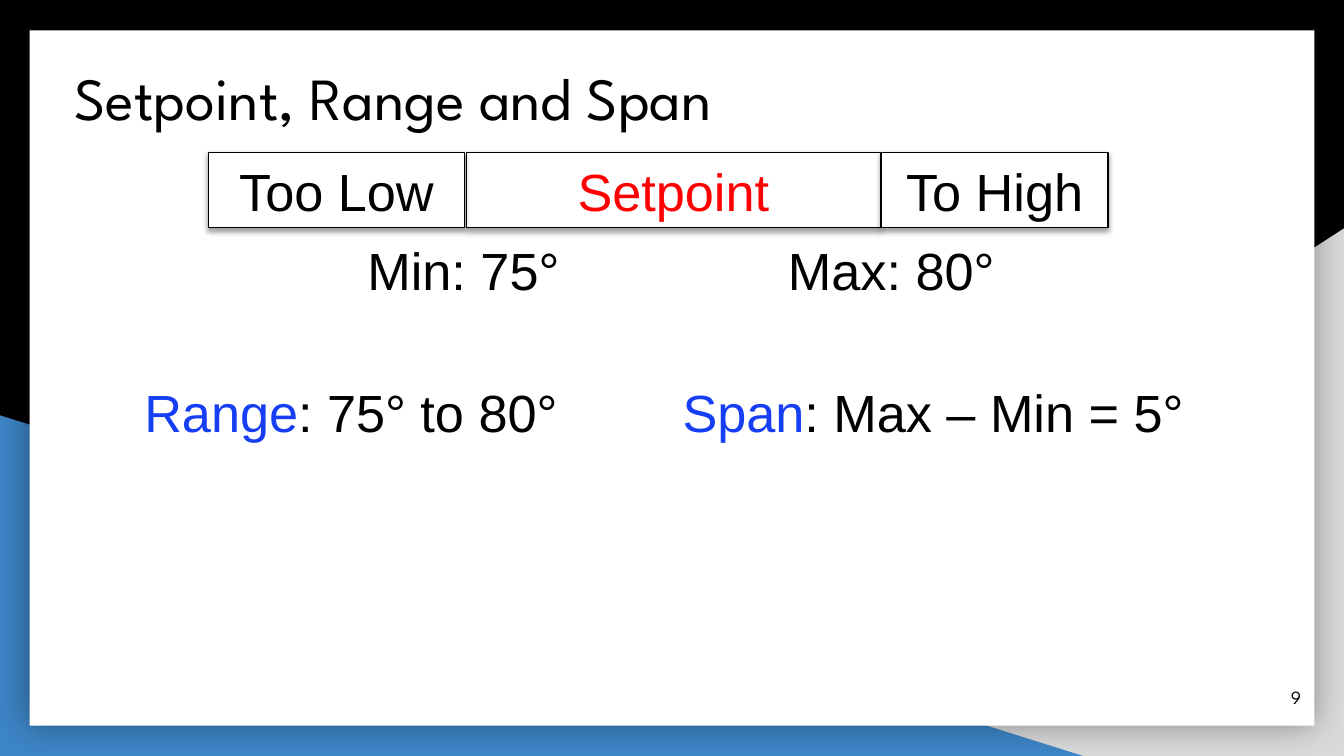
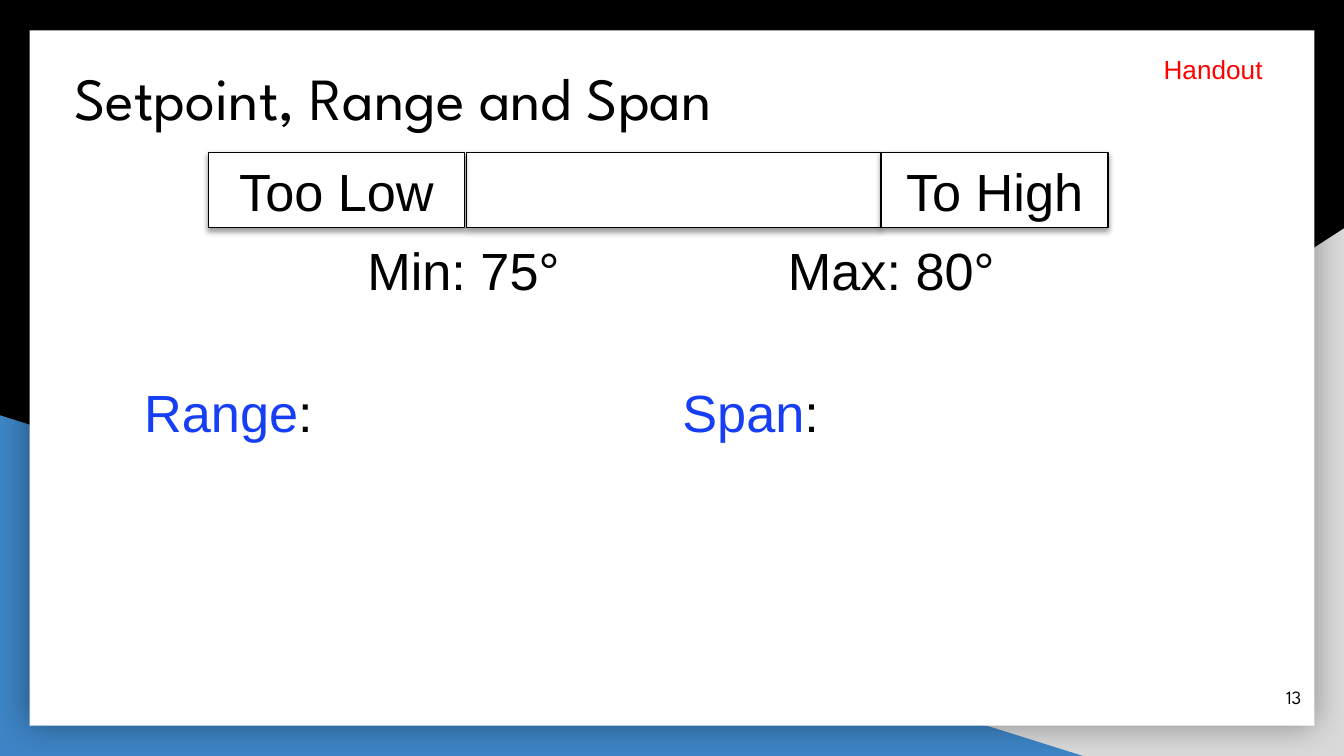
from lxml import etree
from pptx import Presentation
from pptx import util as u
from pptx.dml.color import RGBColor
from pptx.enum import shapes, text
from pptx.oxml.ns import qn

PX = 4572
WIDE, HIGH = 2000, 1125
HEX = {"black": "000000", "white": "FFFFFF", "grey": "D9D9D9",
       "sky": "3D85C6", "blue": "163EF5", "red": "FF0000"}
HEAD, BODY = "League Spartan", "Arial"
KIND = shapes.MSO_SHAPE
ALIGN, ANCHOR, FIT = text.PP_ALIGN, text.MSO_ANCHOR, text.MSO_AUTO_SIZE


def emu(box):
    """Turn a box in px into EMU."""
    return [u.Emu(n * PX) for n in box]


def tint(name):
    """Look up a named colour."""
    return RGBColor.from_string(HEX[name])


def shade(shape, alpha, blur, dist, angle):
    """Give a shape a soft black shadow, with sizes in points."""
    effects = shape._element.spPr.find(qn("a:effectLst"))
    outer = etree.SubElement(effects, qn("a:outerShdw"), algn="ctr", rotWithShape="0",
                             blurRad=str(int(u.Pt(blur))), dist=str(int(u.Pt(dist))),
                             dir=str(angle * 60000))
    colour = etree.SubElement(outer, qn("a:srgbClr"), val=HEX["black"])
    etree.SubElement(colour, qn("a:alpha"), val=str(alpha * 1000))


def block(parts, kind, box, fill, line=None):
    """Add a filled preset shape."""
    shape = parts.add_shape(kind, *emu(box))
    shape.shadow.inherit = False
    shape.fill.solid()
    shape.fill.fore_color.rgb = tint(fill)
    if line:
        shape.line.color.rgb = tint(line)
        shape.line.width = u.Pt(0.75)
    else:
        shape.line.fill.background()
    return shape


def write(shape, runs, size, face=BODY, align=ALIGN.LEFT):
    """Fill a shape with one paragraph of (words, colour) runs."""
    line = shape.text_frame.paragraphs[0]
    line.alignment = align
    for words, colour in runs:
        run = line.add_run()
        run.text = words
        run.font.size = u.Pt(size)
        run.font.name = face
        run.font.color.rgb = tint(colour)


def inset(area, pad):
    """Set equal margins on all four sides."""
    area.margin_left = area.margin_right = u.Emu(pad * PX)
    area.margin_top = area.margin_bottom = u.Emu(pad * PX)


def label(parts, box, runs, size=28, wrap=False):
    """Add a text box that grows with its text."""
    shape = parts.add_textbox(*emu(box))
    shape.text_frame.word_wrap = wrap
    shape.text_frame.auto_size = FIT.SHAPE_TO_FIT_TEXT
    write(shape, runs, size)


def frame(slide, box):
    """Build the shared backdrop and move it onto the slide's layout."""
    x, y, w, h = box
    layout = slide.slide_layout
    layout.background.fill.solid()
    layout.background.fill.fore_color.rgb = tint("black")
    grey = block(slide.shapes, KIND.RIGHT_TRIANGLE, (x + w - 1216, y + h - 785, 1216, 785), "grey")
    grey._element.spPr.find(qn("a:xfrm")).set("flipH", "1")
    sky = block(slide.shapes, KIND.RIGHT_TRIANGLE, (x, y + h - 507, 1612, 507), "sky")
    card = block(slide.shapes, KIND.RECTANGLE, (x + 44, y + 45, w - 88, h - 90), "white")
    shade(card, 40, 18, 0, 0)
    for place, shape in enumerate((grey, sky, card), 2):
        layout.shapes._spTree.insert(place, shape._element)


def title(slide, box, words):
    """Place the title placeholder."""
    shape = slide.shapes.title
    shape.left, shape.top, shape.width, shape.height = emu(box)
    area = shape.text_frame
    area.auto_size = FIT.NONE
    area.vertical_anchor = ANCHOR.TOP
    inset(area, 20)
    write(shape, [(words, "black")], 32, HEAD)


def folio(slide, box, number):
    """Add the page number."""
    shape = slide.shapes.add_textbox(*emu(box))
    area = shape.text_frame
    area.word_wrap = True
    area.vertical_anchor = ANCHOR.MIDDLE
    inset(area, 20)
    write(shape, [(str(number), "black")], 10, HEAD, ALIGN.RIGHT)


def gauge(slide, box, middle):
    """Draw the three-part scale with its limits."""
    x, y, w, h = box
    group = slide.shapes.add_group_shape().shapes
    cells = [(384, 616, middle, "red"), (0, 381, "Too Low", "black"),
             (w - 338, 338, "To High", "black")]
    for left, width, words, colour in cells:
        cell = block(group, KIND.RECTANGLE, (x + left, y, width, h), "white", "black")
        shade(cell, 38, 3.1, 1.6, 90)
        if words:
            cell.text_frame.vertical_anchor = ANCHOR.MIDDLE
            write(cell, [(words, colour)], 28, align=ALIGN.CENTER)
    label(group, (x + 217, y + h + 5, 330, 114), [("Min: 75°", "black")])
    label(group, (x + 843, y + h + 5, 420, 114), [("Max: 80°", "black")], wrap=True)


def terms(slide, box, items):
    """Set the defined terms side by side."""
    x, y, w, h = box
    for index, (term, rest, width) in enumerate(items):
        label(slide.shapes, (x + index * w // 2, y, width, h),
              [(term, "blue"), (rest, "black")])


def page(slide, number, middle, items):
    """Compose one setpoint slide."""
    title(slide, (91, 70, 1810, 130), "Setpoint, Range and Span")
    folio(slide, (1836, 995, 120, 86), number)
    gauge(slide, (310, 227, 1339, 112), middle)
    terms(slide, (195, 556, 1602, 114), items)


def main():
    """Build the deck."""
    deck = Presentation()
    deck.slide_width, deck.slide_height = emu((WIDE, HIGH))
    layout = deck.slide_layouts[5]
    solved, blank = (deck.slides.add_slide(layout) for _ in range(2))
    frame(solved, (0, 0, WIDE, HIGH))
    page(solved, 9, "Setpoint",
         [("Range", ": 75° to 80°", 664), ("Span", ": Max – Min = 5°", 796)])
    page(blank, 13, "", [("Range", ":", 294), ("Span", ":", 246)])
    label(blank.shapes, (1712, 70, 188, 68), [("Handout", "red")], 14)
    deck.save("out.pptx")


if __name__ == "__main__":
    main()
